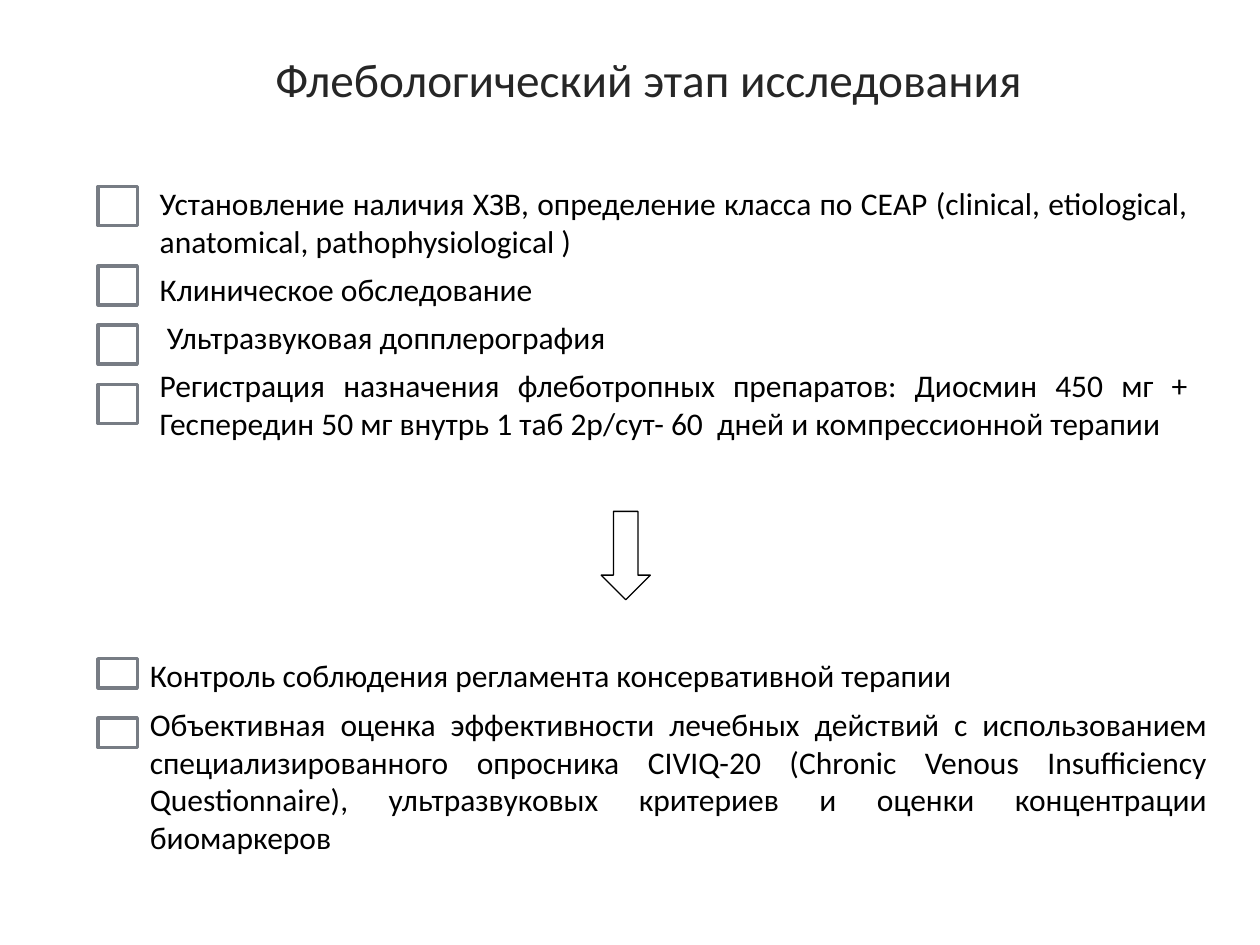
from dataclasses import dataclass

from pptx import Presentation
from pptx.dml.color import RGBColor
from pptx.enum.shapes import MSO_SHAPE
from pptx.enum.text import MSO_ANCHOR, PP_ALIGN
from pptx.util import Cm, Pt

RECTANGLE = MSO_SHAPE.RECTANGLE
DOWN_ARROW = MSO_SHAPE.DOWN_ARROW
TOP, MIDDLE = MSO_ANCHOR.TOP, MSO_ANCHOR.MIDDLE
CENTER, JUSTIFY = PP_ALIGN.CENTER, PP_ALIGN.JUSTIFY

BLACK = RGBColor(0x00, 0x00, 0x00)
WHITE = RGBColor(0xFF, 0xFF, 0xFF)
CHARCOAL = RGBColor(0x26, 0x26, 0x26)
GREY = RGBColor(0x77, 0x7C, 0x84)

FONT = "Calibri"
CHECKBOX_LEFT = 1.98
CHECKBOX_WIDTH = 0.79


@dataclass(frozen=True)
class Area:
    """Position and size in centimetres."""
    left: float
    top: float
    width: float
    height: float

    def lengths(self) -> tuple:
        return Cm(self.left), Cm(self.top), Cm(self.width), Cm(self.height)


@dataclass(frozen=True)
class TextBlock:
    area: Area
    lines: tuple[str, ...]
    size: float = 18
    color: RGBColor = BLACK
    alignment: PP_ALIGN = JUSTIFY
    anchor: MSO_ANCHOR = TOP


@dataclass(frozen=True)
class Checklist:
    text: TextBlock
    checkbox_tops: tuple[float, ...]
    checkbox_height: float


TITLE = TextBlock(
    Area(1.57, 0.79, 23.01, 1.6),
    ("Флебологический этап исследования",),
    size=27, color=CHARCOAL, alignment=CENTER, anchor=MIDDLE,
)

EXAMINATION = Checklist(
    TextBlock(Area(2.97, 3.58, 21.23, 5.51), (
        "Установление наличия ХЗВ, определение класса по СЕАР "
        "(clinical, etiological, anatomical, pathophysiological )",
        "Клиническое обследование",
        " Ультразвуковая допплерография",
        "Регистрация назначения флеботропных препаратов: Диосмин 450 мг + "
        "Геспередин 50 мг внутрь 1 таб 2р/сут- 60  дней и компрессионной терапии",
    )),
    checkbox_tops=(3.76, 5.36, 6.55, 7.75),
    checkbox_height=0.79,
)

FOLLOW_UP = Checklist(
    TextBlock(Area(2.77, 13.11, 21.82, 4.32), (
        "Контроль соблюдения регламента консервативной терапии",
        "Объективная оценка эффективности лечебных действий с использованием "
        "специализированного опросника CIVIQ-20 (Chronic Venous Insufficiency "
        "Questionnaire), ультразвуковых критериев и оценки концентрации биомаркеров",
    )),
    checkbox_tops=(13.28, 14.48),
    checkbox_height=0.59,
)

ARROW_AREA = Area(12.12, 10.31, 0.99, 1.78)


def apply_format(target: object, values: dict) -> None:
    for name, value in values.items():
        setattr(target, name, value)


def add_text(page, block: TextBlock) -> None:
    frame = page.shapes.add_textbox(*block.area.lengths()).text_frame
    apply_format(frame, {"word_wrap": True, "vertical_anchor": block.anchor})
    for index, line in enumerate(block.lines):
        para = frame.add_paragraph() if index else frame.paragraphs[0]
        is_last = index == len(block.lines) - 1
        apply_format(para, {
            "alignment": block.alignment,
            "space_after": Pt(0 if is_last else 6),
        })
        span = para.add_run()
        span.text = line
        apply_format(span.font, {"name": FONT, "size": Pt(block.size)})
        span.font.color.rgb = block.color


def add_outlined_shape(page, kind: MSO_SHAPE, area: Area,
                       line_color: RGBColor, line_width: float) -> None:
    shape = page.shapes.add_shape(kind, *area.lengths())
    shape.shadow.inherit = False
    shape.fill.solid()
    shape.fill.fore_color.rgb = WHITE
    shape.line.color.rgb = line_color
    shape.line.width = Pt(line_width)


def add_checklist(page, checklist: Checklist) -> None:
    add_text(page, checklist.text)
    for top in checklist.checkbox_tops:
        area = Area(CHECKBOX_LEFT, top, CHECKBOX_WIDTH, checklist.checkbox_height)
        add_outlined_shape(page, RECTANGLE, area, GREY, 2)


def main() -> None:
    deck = Presentation()
    apply_format(deck, {"slide_width": Cm(25.4), "slide_height": Cm(19.05)})
    page = deck.slides.add_slide(deck.slide_layouts[6])
    add_text(page, TITLE)
    add_checklist(page, EXAMINATION)
    add_outlined_shape(page, DOWN_ARROW, ARROW_AREA, BLACK, 0.75)
    add_checklist(page, FOLLOW_UP)
    deck.save("out.pptx")


if __name__ == "__main__":
    main()
